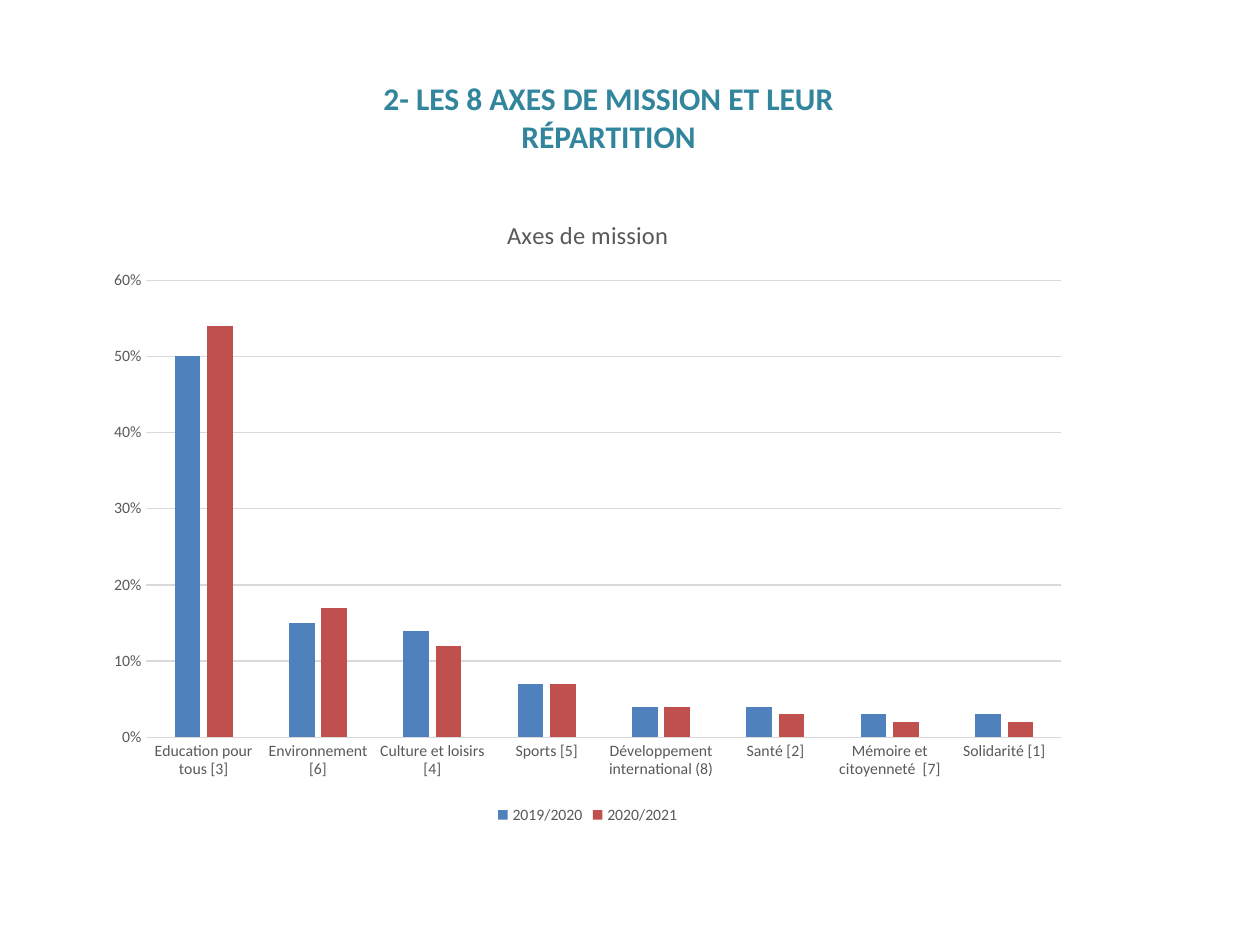
"""Build the slide on the eight mission axes and their distribution."""
from pptx import Presentation
from pptx.chart.data import CategoryChartData
from pptx.dml.color import RGBColor
from pptx.enum.chart import XL_CHART_TYPE as ChartType
from pptx.enum.chart import XL_LEGEND_POSITION as LegendPosition
from pptx.enum.chart import XL_TICK_MARK as TickMark
from pptx.enum.text import PP_ALIGN as Align
from pptx.util import Inches, Pt

TEAL = RGBColor(0x31, 0x85, 0x9C)
GREY = RGBColor(0x59, 0x59, 0x59)
PALE = RGBColor(0xD9, 0xD9, 0xD9)
BLUE = RGBColor(0x4F, 0x81, 0xBD)
RED = RGBColor(0xC0, 0x50, 0x4D)

HEADING = "2- LES 8 AXES DE MISSION ET LEUR RÉPARTITION"
CHART_TITLE = "Axes de mission"
MISSIONS = [
    ("Education pour tous [3]", 0.50, 0.54),
    ("Environnement [6]", 0.15, 0.17),
    ("Culture et loisirs [4]", 0.14, 0.12),
    ("Sports [5]", 0.07, 0.07),
    ("Développement international (8)", 0.04, 0.04),
    ("Santé [2]", 0.04, 0.03),
    ("Mémoire et citoyenneté  [7]", 0.03, 0.02),
    ("Solidarité [1]", 0.03, 0.02),
]
YEARS = [("2019/2020", BLUE), ("2020/2021", RED)]


def style_font(font, size, color, bold=False):
    font.name, font.size, font.bold = "Calibri", Pt(size), bold
    font.color.rgb = color


def write(frame, text, *, size, color, bold=False):
    paragraph = frame.paragraphs[0]
    paragraph.alignment = Align.CENTER
    run = paragraph.add_run()
    run.text = text
    style_font(run.font, size, color, bold)


def add_heading(slide):
    frame = slide.shapes.add_textbox(
        Inches(2.33), Inches(0.58), Inches(5), Inches(0.71)).text_frame
    frame.word_wrap = True
    write(frame, HEADING, size=18, color=TEAL, bold=True)


def add_missions(slide):
    names, *shares = zip(*MISSIONS)
    data = CategoryChartData(number_format="0%")
    data.categories = names
    for (year, _), values in zip(YEARS, shares):
        data.add_series(year, values)
    chart = slide.shapes.add_chart(
        ChartType.COLUMN_CLUSTERED, Inches(0.75), Inches(1.54),
        Inches(7.83), Inches(5.04), data).chart
    style_font(chart.font, 10, GREY)
    write(chart.chart_title.text_frame, CHART_TITLE, size=14, color=GREY)
    chart.chart_title.include_in_layout = False

    columns = chart.plots[0]
    columns.gap_width, columns.overlap = 219, -27
    columns.vary_by_categories = False
    for series, (_, color) in zip(columns.series, YEARS):
        series.format.fill.solid()
        series.format.fill.fore_color.rgb = color

    for axis in (chart.category_axis, chart.value_axis):
        axis.major_tick_mark = axis.minor_tick_mark = TickMark.NONE
        style_font(axis.tick_labels.font, 9, GREY)
    share_axis = chart.value_axis
    share_axis.minimum_scale, share_axis.maximum_scale = 0, 0.6
    share_axis.major_unit = 0.1
    share_axis.tick_labels.number_format = "0%"
    share_axis.tick_labels.number_format_is_linked = False
    share_axis.format.line.fill.background()
    for rule in (chart.category_axis.format.line,
                 share_axis.major_gridlines.format.line):
        rule.color.rgb = PALE
        rule.width = Pt(0.75)

    chart.has_legend = True
    chart.legend.position = LegendPosition.BOTTOM
    chart.legend.include_in_layout = False
    style_font(chart.legend.font, 9, GREY)


def main():
    deck = Presentation()
    deck.slide_width, deck.slide_height = Inches(10), Inches(7.5)
    slide = deck.slides.add_slide(deck.slide_layouts[6])
    add_heading(slide)
    add_missions(slide)
    deck.save("out.pptx")


if __name__ == "__main__":
    main()
